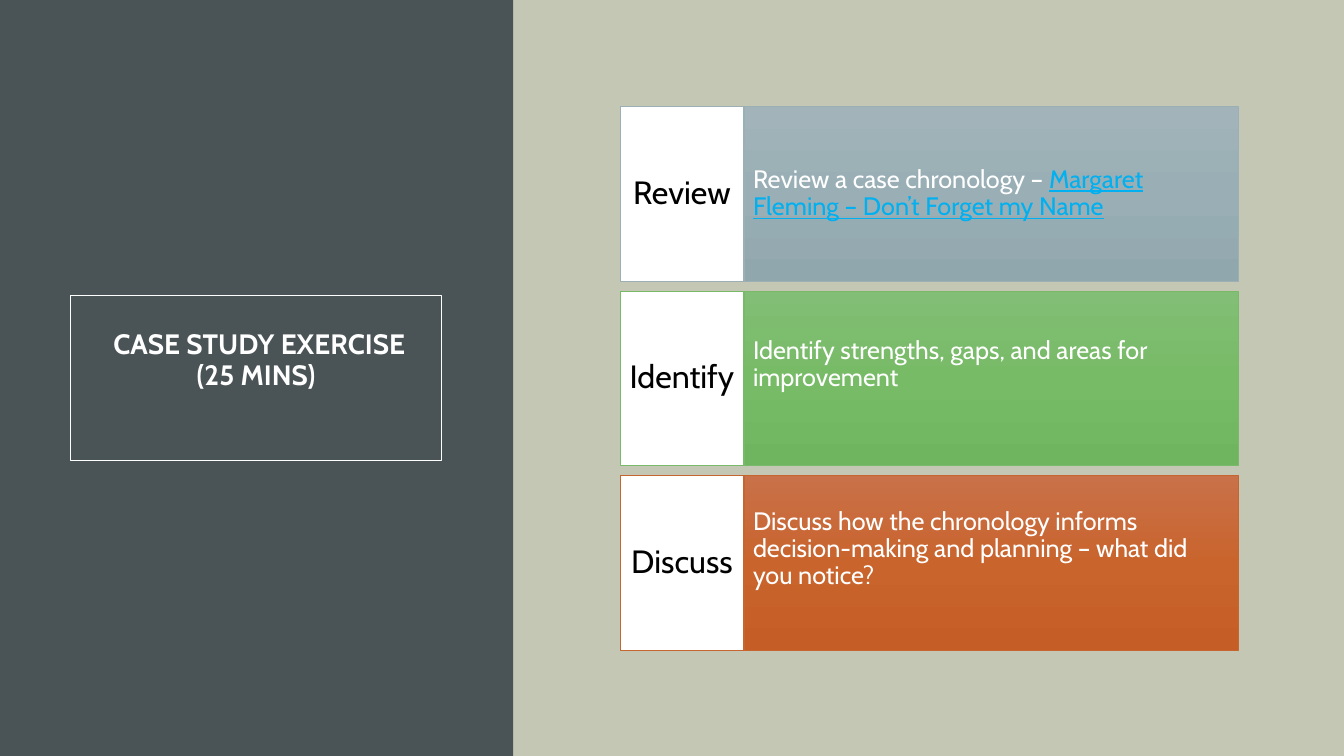
import copy
from dataclasses import dataclass

import pptx
import pptx.dml.color
import pptx.enum.shapes
import pptx.enum.text
import pptx.oxml.ns
import pptx.util

Inches = pptx.util.Inches
Align = pptx.enum.text.PP_ALIGN


@dataclass(frozen=True)
class Theme:
    font: str = "Cabin"
    background: str = "C3C7B4"
    panel: str = "4A5356"
    white: str = "FFFFFF"
    label: str = "000000"
    link: str = "00B0F0"
    title_size: int = 20
    label_size: int = 23
    body_size: int = 18
    line_width: float = 0.75
    line_spacing: float = 0.9


@dataclass(frozen=True)
class Box:
    left: float
    top: float
    width: float
    height: float


@dataclass(frozen=True)
class Insets:
    left: float
    top: float
    right: float
    bottom: float


@dataclass(frozen=True)
class Step:
    label: str
    text: str
    gradient: tuple[str, str, str]
    line: str
    link: str = ""
    lift: float = 0  # extra bottom inset that raises the text


THEME = Theme()
STEPS = [
    Step("Review", "Review a case chronology – ", ("A2B4B9", "99AFB5", "91A7AE"),
         "9BAFB5", link="Margaret Fleming – Don’t Forget my Name"),
    Step("Identify", "Identify strengths, gaps, and areas for improvement",
         ("82BE75", "77BB67", "6FB55F"), "78BA69", lift=0.27),
    Step("Discuss", "Discuss how the chronology informs decision-making and planning"
         " – what did you notice?", ("C97149", "C9642D", "C55D26"), "C76531", lift=0.27),
]
LABEL_LEFT, LABEL_WIDTH = 6.15, 1.23
BAND_LEFT, BAND_WIDTH = 7.37, 4.91
ROW_TOP, ROW_HEIGHT, ROW_PITCH = 1.06, 1.73, 1.83


def rgb(color: str) -> pptx.dml.color.RGBColor:
    return pptx.dml.color.RGBColor.from_string(color)


def add_rect(slide, box: Box, fill: str = "", line: str = ""):
    s = slide.shapes.add_shape(
        pptx.enum.shapes.MSO_SHAPE.RECTANGLE,
        Inches(box.left), Inches(box.top), Inches(box.width), Inches(box.height))
    s.shadow.inherit = False
    if fill:
        s.fill.solid()
        s.fill.fore_color.rgb = rgb(fill)
    set_line(s, line)
    return s


def set_line(s, color: str) -> None:
    if color:
        s.line.color.rgb = rgb(color)
        s.line.width = pptx.util.Pt(THEME.line_width)
    else:
        s.line.fill.background()


def set_gradient(s, colors: tuple[str, str, str]) -> None:
    """Fill from top to bottom with three evenly spaced stops."""
    s.fill.gradient()
    s.fill.gradient_angle = 270
    stops = s.element.spPr.find(".//" + pptx.oxml.ns.qn("a:gsLst"))
    stops.insert(1, copy.deepcopy(stops[0]))
    for i, (stop, color) in enumerate(zip(s.fill.gradient_stops, colors)):
        stop.position = i / 2
        stop.color.rgb = rgb(color)


def format_run(r, size: int, color: str, bold: bool = False) -> None:
    r.font.name = THEME.font
    r.font.size = pptx.util.Pt(size)
    r.font.bold = bold
    r.font.color.rgb = rgb(color)


def write(s, text: str, size: int, color: str, align: Align, insets: Insets,
          bold: bool = False):
    tf = s.text_frame
    tf.text = text
    tf.word_wrap = True
    tf.auto_size = pptx.enum.text.MSO_AUTO_SIZE.NONE
    tf.vertical_anchor = pptx.enum.text.MSO_ANCHOR.MIDDLE
    tf.margin_left, tf.margin_top = Inches(insets.left), Inches(insets.top)
    tf.margin_right, tf.margin_bottom = Inches(insets.right), Inches(insets.bottom)
    p = tf.paragraphs[0]
    p.alignment = align
    p.line_spacing = THEME.line_spacing
    format_run(p.runs[0], size, color, bold)
    return p


def add_title(slide, box: Box) -> None:
    s = slide.shapes.title
    s.element.getparent().append(s.element)  # bring in front of the panel
    s.left, s.top = Inches(box.left), Inches(box.top)
    s.width, s.height = Inches(box.width), Inches(box.height)
    set_line(s, THEME.white)
    write(s, " CASE STUDY EXERCISE (25 MINS)", THEME.title_size, THEME.white,
          Align.CENTER, Insets(0.2, 0.2, 0.2, 0.54), bold=True)


def add_step(slide, step: Step, top: float) -> None:
    # Coloured band with the description
    band = add_rect(slide, Box(BAND_LEFT, top, BAND_WIDTH, ROW_HEIGHT), line=step.line)
    set_gradient(band, step.gradient)
    p = write(band, step.text, THEME.body_size, THEME.white, Align.LEFT,
              Insets(0.1, 0.44, 0.1, 0.44 + step.lift))
    if step.link:
        r = p.add_run()
        r.text = step.link
        format_run(r, THEME.body_size, THEME.link)
        r.font.underline = True

    # White label cell
    cell = add_rect(slide, Box(LABEL_LEFT, top, LABEL_WIDTH, ROW_HEIGHT),
                    THEME.white, step.line)
    write(cell, step.label, THEME.label_size, THEME.label, Align.CENTER,
          Insets(0.06, 0.17, 0.06, 0.17))


def main() -> None:
    prs = pptx.Presentation()
    prs.slide_width, prs.slide_height = Inches(13.33), Inches(7.5)
    slide = prs.slides.add_slide(prs.slide_layouts.get_by_name("Title Only"))
    slide.background.fill.solid()
    slide.background.fill.fore_color.rgb = rgb(THEME.background)

    # Left panel and title
    add_rect(slide, Box(0, 0, 5.09, 7.5), THEME.panel)
    add_title(slide, Box(0.7, 2.93, 3.68, 1.64))

    # Exercise steps
    for i, step in enumerate(STEPS):
        add_step(slide, step, ROW_TOP + i * ROW_PITCH)

    prs.save("out.pptx")


if __name__ == "__main__":
    main()
